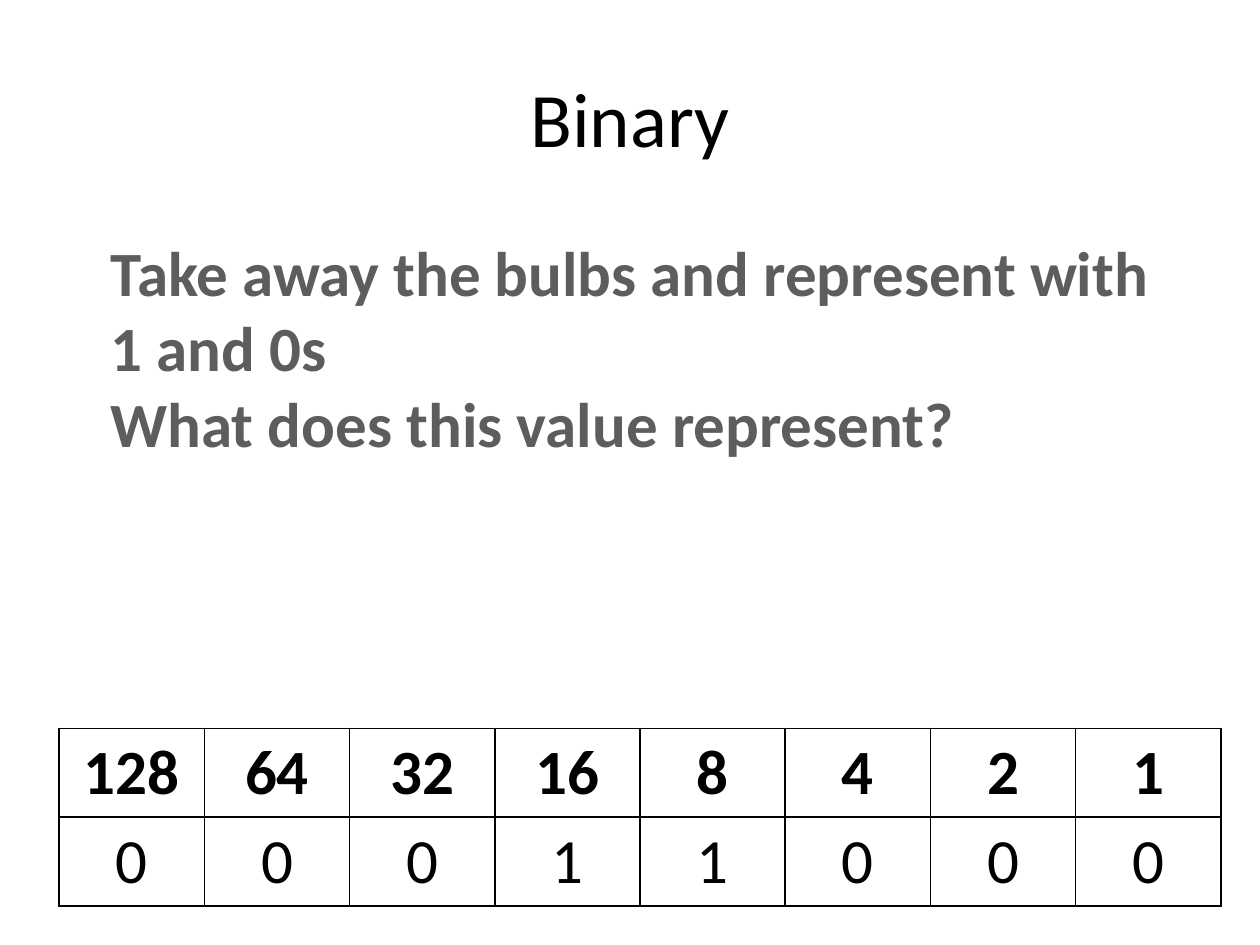
import pptx
import pptx.util
import pptx.dml.color
import pptx.enum.text
import pptx.oxml
import pptx.oxml.ns
from pptx.util import Inches

BLACK = pptx.dml.color.RGBColor(0x00, 0x00, 0x00)
WHITE = pptx.dml.color.RGBColor(0xFF, 0xFF, 0xFF)
GREY = pptx.dml.color.RGBColor(0x5D, 0x5D, 0x5D)
ALIGN = pptx.enum.text.PP_ALIGN
MIDDLE = pptx.enum.text.MSO_ANCHOR.MIDDLE


def style(para, text, size, color, bold=False, align=ALIGN.CENTER):
    para.text = text
    para.alignment = align
    para.font.name = "Calibri"
    para.font.size = pptx.util.Pt(size)
    para.font.bold = bold
    para.font.color.rgb = color


def border(cell):
    props = cell._tc.get_or_add_tcPr()
    for pos, side in enumerate(("lnL", "lnR", "lnT", "lnB")):
        line = pptx.oxml.parse_xml(
            f'<a:{side} {pptx.oxml.ns.nsdecls("a")} w="12700"><a:solidFill>'
            f'<a:srgbClr val="{BLACK}"/></a:solidFill></a:{side}>')
        props.insert(pos, line)


deck = pptx.Presentation()
deck.slide_width, deck.slide_height = Inches(10), Inches(7.5)
slide = deck.slides.add_slide(deck.slide_layouts[6])

# Title
title = slide.shapes.add_textbox(Inches(0.5), Inches(0.3), Inches(9), Inches(1.25))
title.text_frame.word_wrap = True
title.text_frame.vertical_anchor = MIDDLE
style(title.text_frame.paragraphs[0], "Binary", 44, BLACK)

# Question
body = slide.shapes.add_textbox(Inches(0.78), Inches(1.8), Inches(8.64), Inches(1.92))
frame = body.text_frame
frame.word_wrap = False
frame.auto_size = pptx.enum.text.MSO_AUTO_SIZE.SHAPE_TO_FIT_TEXT
lines = ["Take away the bulbs and represent with", "1 and 0s",
         "What does this value represent?"]
for num, text in enumerate(lines):
    para = frame.add_paragraph() if num else frame.paragraphs[0]
    style(para, text, 36, GREY, True, ALIGN.LEFT)

# Place values and bits
bits = "00011000"
rows = [[str(2 ** p) for p in reversed(range(len(bits)))], list(bits)]
table = slide.shapes.add_table(len(rows), len(bits), Inches(0.47), Inches(5.78),
                               Inches(9.22), Inches(1.41)).table
for r, row in enumerate(rows):
    for c, text in enumerate(row):
        cell = table.cell(r, c)
        cell.fill.solid()
        cell.fill.fore_color.rgb = WHITE
        cell.vertical_anchor = MIDDLE
        style(cell.text_frame.paragraphs[0], text, 36, BLACK, r == 0)
        border(cell)

deck.save("out.pptx")
